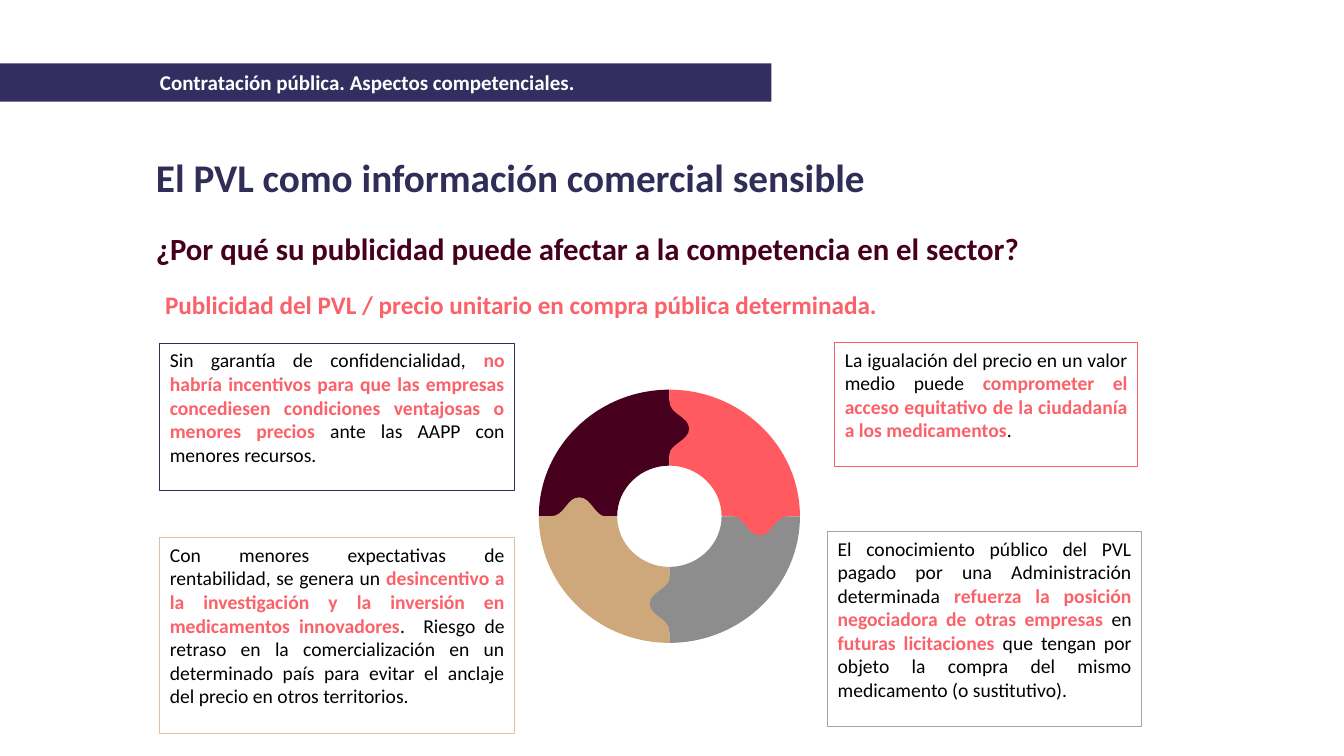
from lxml import etree
from pptx import Presentation
from pptx.dml.color import RGBColor
from pptx.enum.shapes import MSO_SHAPE
from pptx.enum.text import MSO_ANCHOR, MSO_AUTO_SIZE, PP_ALIGN
from pptx.oxml.ns import qn
from pptx.util import Cm, Pt

RECTANGLE = MSO_SHAPE.RECTANGLE
TOP, MIDDLE = MSO_ANCHOR.TOP, MSO_ANCHOR.MIDDLE
LEFT, CENTER, JUSTIFY = PP_ALIGN.LEFT, PP_ALIGN.CENTER, PP_ALIGN.JUSTIFY
NO_AUTOSIZE = MSO_AUTO_SIZE.NONE
CORAL, WINE, NAVY = "FB6169", "46001D", "302D56"


def color(value):
    return RGBColor.from_string(value)


def write(shape, text, size, tint, bold=True, align=LEFT, anchor=TOP):
    frame = shape.text_frame
    settings = {"word_wrap": True, "auto_size": NO_AUTOSIZE, "vertical_anchor": anchor,
                "margin_left": Cm(0.25), "margin_right": Cm(0.25),
                "margin_top": Cm(0.13), "margin_bottom": Cm(0.13)}
    for name, value in settings.items():
        setattr(frame, name, value)
    para = frame.paragraphs[0]
    para.alignment = align
    for index, part in enumerate(text.split("*")):
        marked = index % 2 == 1
        span = para.add_run()
        span.text = part
        for name, value in {"name": "Calibri", "size": Pt(size), "bold": bold or marked}.items():
            setattr(span.font, name, value)
        span.font.color.rgb = color(CORAL if marked else tint)


deck = Presentation()
deck.slide_width, deck.slide_height = Cm(33.87), Cm(19.05)
page = deck.slides.add_slide(deck.slide_layouts[5])

bar = page.shapes.add_shape(RECTANGLE, Cm(0), Cm(1.6), Cm(19.44), Cm(0.96))
bar.shadow.inherit = False
bar.fill.solid()
bar.fill.fore_color.rgb = color("322F60")
bar.line.fill.background()

title = page.shapes.title
title.left, title.top, title.width, title.height = Cm(3.68), Cm(3.73), Cm(19.15), Cm(1.45)
write(title, "El PVL como información comercial sensible", 28, NAVY, anchor=MIDDLE)

headings = [
    (0, 1.62, 18.52, 0.9, "Contratación pública. Aspectos competenciales.", 15, "FFFFFF", CENTER),
    (3.68, 5.66, 22.81, 1.19, "¿Por qué su publicidad puede afectar a la competencia en el sector?", 22, WINE, JUSTIFY),
    (3.91, 7.16, 29.9, 1, "Publicidad del PVL / precio unitario en compra pública determinada.", 18, CORAL, LEFT),
]
for left, top, width, height, text, size, tint, align in headings:
    box = page.shapes.add_textbox(Cm(left), Cm(top), Cm(width), Cm(height))
    write(box, text, size, tint, align=align)

reasons = [
    (4.03, 8.65, 8.94, 3.71, NAVY,
     "Sin garantía de confidencialidad, *no habría incentivos para que las empresas concediesen "
     "condiciones ventajosas o menores precios *ante las AAPP con menores recursos."),
    (21.04, 8.63, 7.63, 3.12, CORAL,
     "La igualación del precio en un valor medio puede *comprometer el acceso equitativo "
     "de la ciudadanía a los medicamentos*."),
    (4.03, 13.55, 8.94, 4.93, "DDC2A2",
     "Con menores expectativas de rentabilidad, se genera un *desincentivo a la investigación "
     "y la inversión en medicamentos innovadores*.  Riesgo de retraso en la comercialización "
     "en un determinado país para evitar el anclaje del precio en otros territorios."),
    (20.86, 13.39, 7.91, 4.93, "A6A6A6",
     "El conocimiento público del PVL pagado por una Administración determinada *refuerza la "
     "posición negociadora de otras empresas *en *futuras licitaciones *que tengan por objeto "
     "la compra del mismo medicamento (o sustitutivo)."),
]
for left, top, width, height, border, text in reasons:
    box = page.shapes.add_shape(RECTANGLE, Cm(left), Cm(top), Cm(width), Cm(height))
    box.shadow.inherit = False
    box.fill.background()
    box.line.color.rgb = color(border)
    box.line.width = Pt(0.75)
    write(box, text, 14, "000000", bold=False, align=JUSTIFY)

CENTER_X, CENTER_Y, RADIUS_X, RADIUS_Y = 16.87, 13.01, 3.29, 3.19
ring_colors = [WINE, "FF5A60", "8D8D8D", "CEA77A"]
quarter = [(-1, 0), (-1, -0.55), (-0.55, -1), (0, -1), (0, -1), (0, -0.4), (0, -0.4),
           (-0.22, -0.4), (-0.4, -0.22), (-0.4, 0), (-0.4, 0), (-1, 0), (-1, 0)]
tab = [(0, -0.49), (0, -0.39), (-0.17, -0.6), (-0.17, -0.69), (-0.17, -0.79), (0, -1), (0, -0.91),
       (0, -0.8), (0.15, -0.79), (0.15, -0.69), (0.15, -0.6), (0, -0.57), (0, -0.49)]

ring = page.shapes.add_group_shape()
for outline in (quarter, tab):
    points = outline
    for tint in ring_colors:
        placed = [(Cm(CENTER_X + RADIUS_X * x), Cm(CENTER_Y + RADIUS_Y * y)) for x, y in points]
        builder = ring.shapes.build_freeform(*placed[0])
        builder.add_line_segments(placed[1:], close=True)
        piece = builder.convert_to_shape()
        lines = list(piece.element.iter(qn("a:lnTo")))
        for first in range(0, 12, 3):
            curve = etree.Element(qn("a:cubicBezTo"))
            lines[first].addprevious(curve)
            for line in lines[first:first + 3]:
                curve.append(line[0])
                line.getparent().remove(line)
        for line in lines[12:]:
            line.getparent().remove(line)
        piece.shadow.inherit = False
        piece.fill.solid()
        piece.fill.fore_color.rgb = color(tint)
        piece.line.fill.background()
        points = [(-y, x) for x, y in points]

deck.save("out.pptx")
